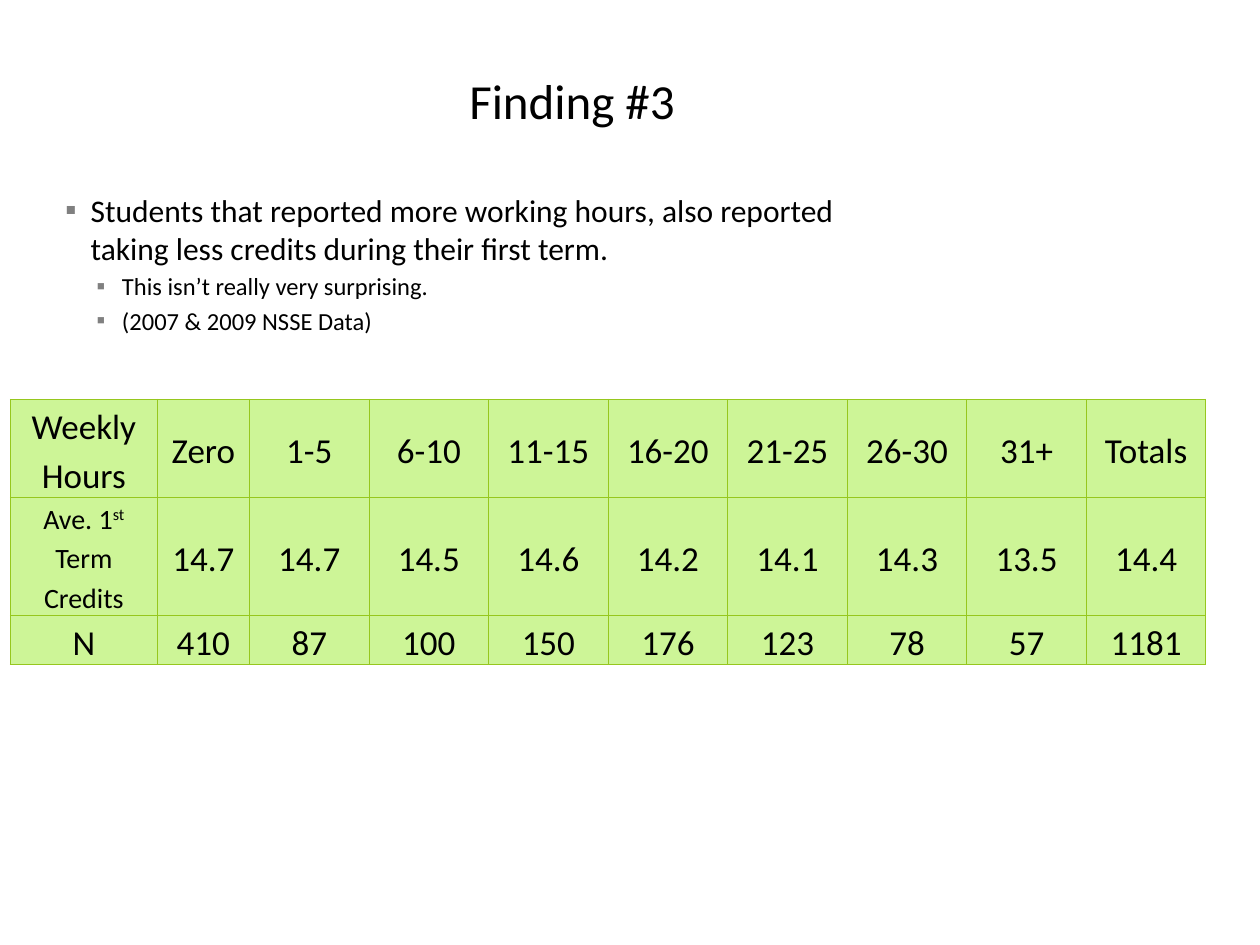
import pptx
import pptx.dml.color
import pptx.enum.text
import pptx.oxml.ns
import pptx.util
from lxml import etree

Cm = pptx.util.Cm
Pt = pptx.util.Pt
ALIGN = pptx.enum.text.PP_ALIGN
MIDDLE = pptx.enum.text.MSO_ANCHOR.MIDDLE

COLOURS = {"text": "000000", "bullet": "808080", "cell": "CDF597", "border": "96C71E"}


def rgb(name):
    return pptx.dml.color.RGBColor.from_string(COLOURS[name])


def add_element(parent, tag, **attributes):
    return etree.SubElement(parent, pptx.oxml.ns.qn(tag), attributes)


def set_all(target, values):
    for name, value in values.items():
        setattr(target, name, value)


class SlideBuilder:
    font_name = "Calibri"
    cell_format = {
        "vertical_anchor": MIDDLE,
        "margin_left": Cm(0.18), "margin_right": Cm(0.18),
        "margin_top": 0, "margin_bottom": 0,
    }
    cell_para_format = {"alignment": ALIGN.CENTER, "line_spacing": 1.15}

    def __init__(self, slide):
        self.slide = slide

    def add_span(self, para, text, size, superscript=False):
        span = para.add_run()
        span.text = text
        set_all(span.font, {"name": self.font_name, "size": Pt(size)})
        span.font.color.rgb = rgb("text")
        if superscript:
            span.font._element.set("baseline", "30000")

    def text_frame(self, left, top, width, height):
        box = self.slide.shapes.add_textbox(Cm(left), Cm(top), Cm(width), Cm(height))
        set_all(box.text_frame, {"word_wrap": True, "vertical_anchor": MIDDLE})
        return box.text_frame

    def title(self, text, size, *place):
        para = self.text_frame(*place).paragraphs[0]
        para.alignment = ALIGN.CENTER
        self.add_span(para, text, size)

    def bullets(self, items, *place):
        frame = self.text_frame(*place)
        for index, (level, text, size) in enumerate(items):
            para = frame.paragraphs[0] if index == 0 else frame.add_paragraph()
            para.level = level
            if index:
                para.space_before = Pt(size * 0.2)
            properties = para._p.get_or_add_pPr()
            properties.set("marL", str(Cm(0.51 + 0.63 * level)))
            properties.set("indent", str(-Cm(0.51)))
            colour = add_element(properties, "a:buClr")
            add_element(colour, "a:srgbClr", val=COLOURS["bullet"])
            add_element(properties, "a:buFont", typeface=self.font_name)
            add_element(properties, "a:buChar", char="▪")
            self.add_span(para, text, size)

    def borders(self, cell):
        properties = cell._tc.get_or_add_tcPr()
        for side in ("a:lnL", "a:lnR", "a:lnT", "a:lnB"):
            line = add_element(properties, side, w=str(Pt(0.75)))
            fill = add_element(line, "a:solidFill")
            add_element(fill, "a:srgbClr", val=COLOURS["border"])

    def table(self, rows, widths, heights, left, top):
        table = self.slide.shapes.add_table(
            len(rows), len(widths), Cm(left), Cm(top), Cm(sum(widths)), Cm(sum(heights))
        ).table
        set_all(table, {"first_row": False, "horz_banding": False})
        for column, width in zip(table.columns, widths):
            column.width = Cm(width)
        for row, height, contents in zip(table.rows, heights, rows):
            row.height = Cm(height)
            for cell, content in zip(row.cells, contents):
                set_all(cell, self.cell_format)
                self.borders(cell)
                cell.fill.solid()
                cell.fill.fore_color.rgb = rgb("cell")
                para = cell.text_frame.paragraphs[0]
                set_all(para, self.cell_para_format)
                # A plain string is one 20 pt run; a list holds separate runs
                spans = [(content, 20)] if isinstance(content, str) else content
                for span in spans:
                    self.add_span(para, *span)


def main():
    deck = pptx.Presentation()
    set_all(deck, {"slide_width": Cm(25.4), "slide_height": Cm(19.05)})
    builder = SlideBuilder(deck.slides.add_slide(deck.slide_layouts[6]))

    # Finding and its remarks
    builder.bullets([
        (0, "Students that reported more working hours, also reported "
            "taking less credits during their first term.", 18),
        (1, "This isn’t really very surprising.", 14),
        (1, "(2007 & 2009 NSSE Data)", 14),
    ], 1.07, 2.34, 16.71, 5.92)

    # Title
    builder.title("Finding #3", 28, 7.62, 0, 7.82, 4.01)

    # Credits by weekly working hours
    credits_label = [("Ave. 1", 16), ("st", 16, True), (" Term Credits", 16)]
    builder.table([
        ["Weekly Hours", "Zero", "1-5", "6-10", "11-15", "16-20", "21-25", "26-30",
         "31+", "Totals"],
        [credits_label, "14.7", "14.7", "14.5", "14.6", "14.2", "14.1", "14.3",
         "13.5", "14.4"],
        ["N", "410", "87", "100", "150", "176", "123", "78", "57", "1181"],
    ], [2.96, 1.86] + [2.41] * 8, [1.98, 2.38, 0.99], 0.21, 8.05)

    deck.save("out.pptx")


if __name__ == "__main__":
    main()
